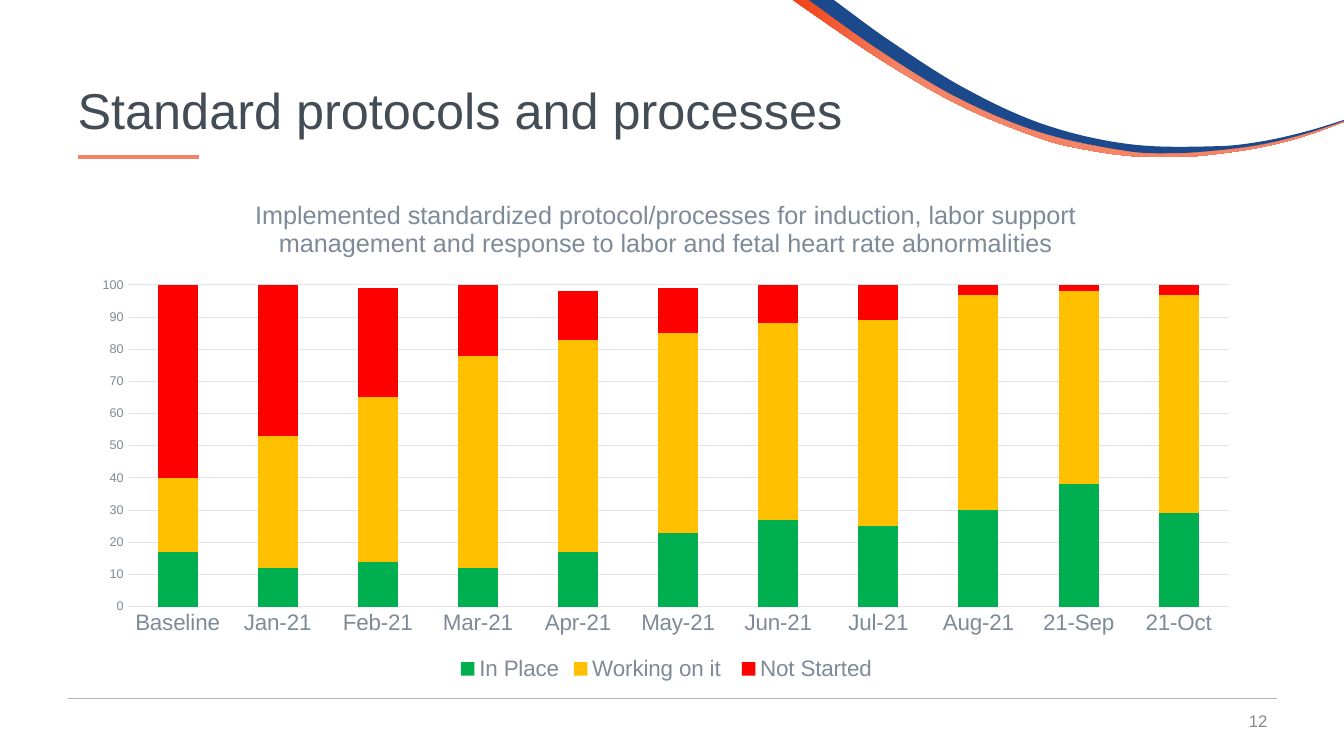
import pptx
import pptx.util
import pptx.chart.data
import pptx.dml.color
import pptx.enum.chart
import pptx.enum.shapes
import pptx.enum.text
from lxml import etree
from pptx.oxml import parse_xml
from pptx.oxml.ns import nsdecls, qn

Inches = pptx.util.Inches
Pt = pptx.util.Pt
FONT = "Arial"
COLORS = {
    "title": "444C55", "muted": "7E8A98", "number": "898989",
    "grid": "E1E4E7", "rule": "AFB3B9", "coral": "F58366",
    "orange": "F04115", "navy": "1C498B",
    "green": "00B050", "amber": "FFC000", "red": "FF0000",
}
ORANGE_TOP = [(8.05, 0), (8.82, 0.54), (9.58, 0.99), (10.39, 1.33), (10.81, 1.44), (11.25, 1.5),
              (11.68, 1.52), (12.12, 1.49), (12.56, 1.43), (12.93, 1.33), (13.33, 1.2)]
ORANGE_BOTTOM = [(7.86, 0), (8.78, 0.62), (9.55, 1.06), (10.37, 1.39), (10.8, 1.49), (11.24, 1.55),
                 (11.69, 1.56), (12.13, 1.52), (12.56, 1.45), (12.94, 1.35), (13.33, 1.21)]
NAVY_TOP = [(8.27, 0), (8.79, 0.38), (9.54, 0.86), (10.34, 1.23), (11.2, 1.43),
            (12.09, 1.45), (12.53, 1.4), (12.97, 1.3), (13.33, 1.19)]
NAVY_BOTTOM = [(8.02, 0), (8.71, 0.49), (9.48, 0.96), (10.31, 1.31), (11.19, 1.5),
               (11.64, 1.52), (12.09, 1.49), (12.53, 1.43), (12.97, 1.32), (13.33, 1.2)]
MONTHS = ["Baseline", "Jan-21", "Feb-21", "Mar-21", "Apr-21", "May-21",
          "Jun-21", "Jul-21", "Aug-21", "21-Sep", "21-Oct"]
SERIES = [
    ("In Place", "green", [17, 12, 14, 12, 17, 23, 27, 25, 30, 38, 29]),
    ("Working on it ", "amber", [23, 41, 51, 66, 66, 62, 61, 64, 67, 60, 68]),
    ("Not Started", "red", [60, 47, 34, 22, 15, 14, 12, 11, 4, 2, 3]),
]
CHART_TITLE = ("Implemented standardized protocol/processes for induction, labor support "
               "management and response to labor and fetal heart rate abnormalities")


def rgb(name):
    return pptx.dml.color.RGBColor.from_string(COLORS[name])


def style_font(font, size, color):
    font.name = FONT
    font.size = Pt(size)
    font.bold = False
    font.color.rgb = rgb(color)


def smooth_edge(knots, steps=10):
    last = len(knots) - 1
    slopes = []
    for i in range(last + 1):
        (xa, ya), (xb, yb) = knots[max(i - 1, 0)], knots[min(i + 1, last)]
        slopes.append((yb - ya) / (xb - xa))
    points = [knots[0]]
    for i in range(last):
        (xa, ya), (xb, yb) = knots[i], knots[i + 1]
        width = xb - xa
        for step in range(1, steps + 1):
            t = step / steps
            y = ((2 * t**3 - 3 * t**2 + 1) * ya + (3 * t**2 - 2 * t**3) * yb
                 + width * ((t**3 - 2 * t**2 + t) * slopes[i] + (t**3 - t**2) * slopes[i + 1]))
            points.append((xa + width * t, y))
    return points


def add_ribbon(s, top, bottom):
    edges = smooth_edge(top) + smooth_edge(bottom)[::-1]
    outline = [(Inches(x), Inches(y)) for x, y in edges]
    builder = s.shapes.build_freeform(*outline[0])
    builder.add_line_segments(outline[1:], close=True)
    sp = builder.convert_to_shape()
    sp.shadow.inherit = False
    sp.line.fill.background()
    return sp


def add_swoosh(s):
    sp = add_ribbon(s, ORANGE_TOP, ORANGE_BOTTOM)
    sp.fill.gradient()
    sp.fill.gradient_angle = 0
    for stop, position, color in zip(sp.fill.gradient_stops, (0, 0.2), ("orange", "coral")):
        stop.position = position
        stop.color.rgb = rgb(color)
    sp = add_ribbon(s, NAVY_TOP, NAVY_BOTTOM)
    sp.fill.solid()
    sp.fill.fore_color.rgb = rgb("navy")


def add_rule(s, left, top, width, color, weight):
    line = s.shapes.add_connector(pptx.enum.shapes.MSO_CONNECTOR.STRAIGHT, Inches(left),
                                  Inches(top), Inches(left + width), Inches(top))
    line.line.color.rgb = rgb(color)
    line.line.width = Pt(weight)
    etree.SubElement(line._element.spPr, qn("a:effectLst"))


def add_title(s, left, top, width, height):
    title = s.shapes.title
    title.left, title.top, title.width, title.height = map(Inches, (left, top, width, height))
    tf = title.text_frame
    tf.text = "Standard protocols and processes"
    tf.vertical_anchor = pptx.enum.text.MSO_ANCHOR.MIDDLE
    p = tf.paragraphs[0]
    p.alignment = pptx.enum.text.PP_ALIGN.LEFT
    p.line_spacing = 0.9
    style_font(p.runs[0].font, 36, "title")
    add_rule(s, left + 0.1, top + 1.16, 1.2, "coral", 2.5)


def add_footer(s, left, top, width):
    add_rule(s, left, top, width, "rule", 0.5)
    box = s.shapes.add_textbox(Inches(left + width - 3), Inches(top + 0.02), Inches(3), Inches(0.4))
    tf = box.text_frame
    tf.word_wrap = True
    tf.vertical_anchor = pptx.enum.text.MSO_ANCHOR.MIDDLE
    tf.text = "12"
    p = tf.paragraphs[0]
    p.alignment = pptx.enum.text.PP_ALIGN.RIGHT
    style_font(p.runs[0].font, 12, "number")


def set_layout(element, x, y, size=None):
    edges = [("xMode", "edge"), ("yMode", "edge"), ("x", x), ("y", y)]
    if size:
        edges = [("layoutTarget", "inner")] + edges + [("w", size[0]), ("h", size[1])]
    parts = "".join(f'<c:{tag} val="{value}"/>' for tag, value in edges)
    for old in element.findall(qn("c:layout")):
        element.remove(old)
    layout = parse_xml(f'<c:layout {nsdecls("c")}><c:manualLayout>{parts}</c:manualLayout></c:layout>')
    text = element.find(qn("c:tx"))
    if text is None:
        element.insert(0, layout)
    else:
        text.addnext(layout)


def add_progress_chart(s, left, top, width, height):
    data = pptx.chart.data.CategoryChartData()
    data.categories = MONTHS
    for name, color, values in SERIES:
        data.add_series(name, values)
    chart = s.shapes.add_chart(pptx.enum.chart.XL_CHART_TYPE.COLUMN_STACKED,
                               *map(Inches, (left, top, width, height)), data).chart
    style_font(chart.font, 10, "title")
    chart.has_title = True
    tf = chart.chart_title.text_frame
    tf.text = CHART_TITLE
    style_font(tf.paragraphs[0].runs[0].font, 18, "muted")
    chart.chart_title.include_in_layout = False
    set_layout(chart.chart_title._element, 0.145, 0.03)
    set_layout(chart._chartSpace.chart.plotArea, 0.04, 0.21, (0.94, 0.635))

    plot = chart.plots[0]
    plot.gap_width = 150
    plot.overlap = 100
    plot.vary_by_categories = False
    for series, (name, color, values) in zip(plot.series, SERIES):
        series.format.fill.solid()
        series.format.fill.fore_color.rgb = rgb(color)

    months, percent = chart.category_axis, chart.value_axis
    for axis, size in ((months, 16), (percent, 9)):
        axis.major_tick_mark = pptx.enum.chart.XL_TICK_MARK.NONE
        axis.minor_tick_mark = pptx.enum.chart.XL_TICK_MARK.NONE
        style_font(axis.tick_labels.font, size, "muted")
    percent.minimum_scale, percent.maximum_scale, percent.major_unit = 0, 100, 10
    percent.has_major_gridlines = True
    percent.format.line.fill.background()
    for line in (months.format.line, percent.major_gridlines.format.line):
        line.color.rgb = rgb("grid")
        line.width = Pt(0.75)

    chart.has_legend = True
    chart.legend.position = pptx.enum.chart.XL_LEGEND_POSITION.BOTTOM
    chart.legend.include_in_layout = False
    style_font(chart.legend.font, 16, "muted")


def main():
    prs = pptx.Presentation()
    prs.slide_width, prs.slide_height = Inches(13.33), Inches(7.5)
    s = prs.slides.add_slide(prs.slide_layouts[5])
    add_swoosh(s)
    add_title(s, 0.67, 0.4, 12, 1.45)
    add_footer(s, 0.67, 6.93, 12)
    add_progress_chart(s, 0.8, 1.77, 11.62, 5.03)
    prs.save("out.pptx")


if __name__ == "__main__":
    main()
